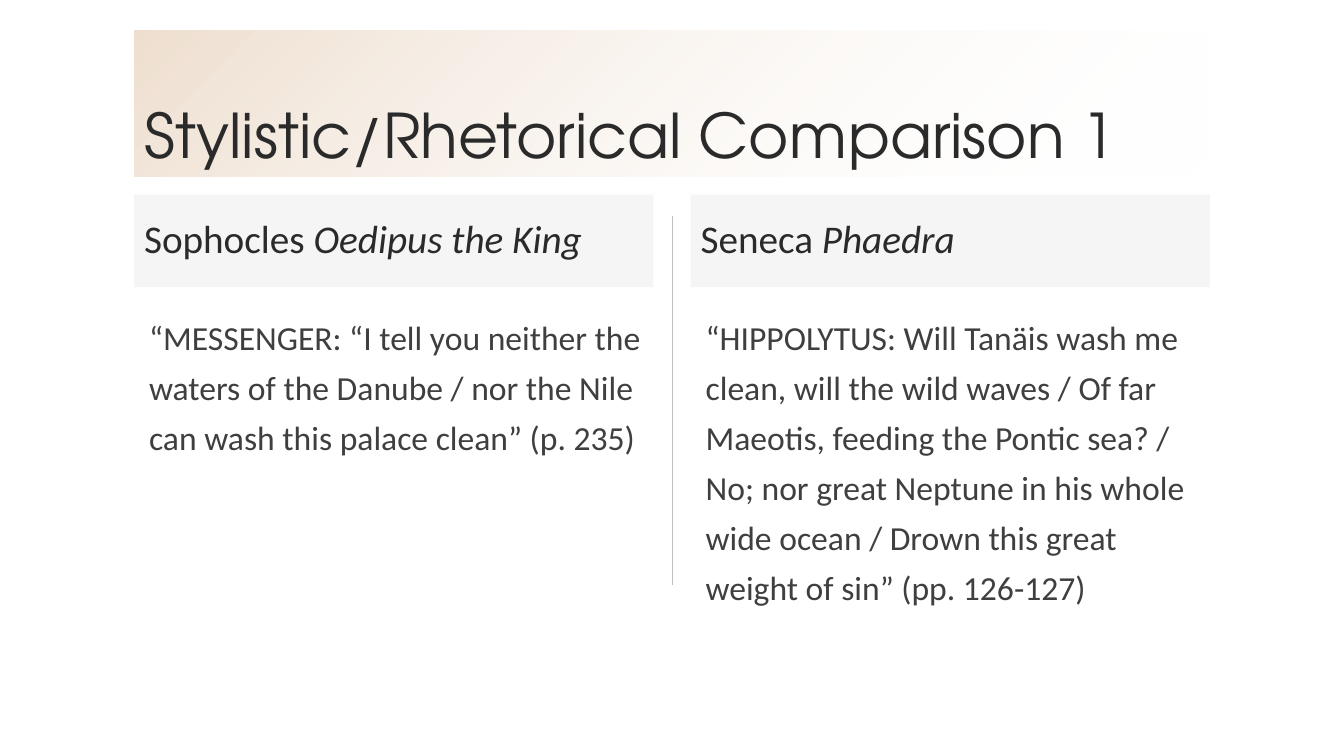
from lxml.etree import SubElement
from pptx import Presentation
from pptx.dml.color import RGBColor
from pptx.enum.shapes import MSO_CONNECTOR as Connector, MSO_SHAPE as Shape
from pptx.enum.text import MSO_ANCHOR as Anchor, MSO_AUTO_SIZE as AutoSize, PP_ALIGN as Align
from pptx.oxml.ns import qn
from pptx.util import Inches, Pt

DARK = RGBColor(0x2A, 0x2A, 0x2A)
BODY = RGBColor(0x3F, 0x3F, 0x3F)
GREY = RGBColor(0xBF, 0xBF, 0xBF)
TAN = RGBColor(0xCE, 0x9F, 0x71)
WHITE = RGBColor(0xFF, 0xFF, 0xFF)

LEFT, COLUMN_WIDTH, COLUMN_STEP = 1.33, 5.15, 5.52

COLUMNS = [
    ("Sophocles ", "Oedipus the King",
     "“MESSENGER: “I tell you neither the waters of the Danube / nor the Nile "
     "can wash this palace clean” (p. 235)"),
    ("Seneca ", "Phaedra",
     "“HIPPOLYTUS: Will Tanäis wash me clean, will the wild waves / Of far Maeotis, "
     "feeding the Pontic sea? / No; nor great Neptune in his whole wide ocean / "
     "Drown this great weight of sin” (pp. 126-127)"),
]


def set_alphas(shape, *percents):
    """Give each colour of the shape's fill its opacity, in order."""
    colours = shape.fill._xPr.iter(qn("a:srgbClr"))
    for colour, percent in zip(colours, percents):
        SubElement(colour, qn("a:alpha"), val=str(percent * 1000))


class ComparisonSlide:
    title_font = "TeX Gyre Adventor"
    text_font = "Calibri"

    def __init__(self, slide):
        self.slide = slide
        self.shapes = slide.shapes

    def style(self, frame, font_name, size, colour, anchor, spacing):
        frame.word_wrap = True
        frame.auto_size = AutoSize.NONE
        frame.vertical_anchor = anchor
        paragraph = frame.paragraphs[0]
        paragraph.alignment = Align.LEFT
        paragraph.line_spacing = spacing
        paragraph.space_before = Pt(0)
        paragraph.font.name = font_name
        paragraph.font.size = Pt(size)
        paragraph.font.color.rgb = colour
        return paragraph

    def title(self, text):
        title = self.shapes.title
        title.left, title.top = Inches(LEFT), Inches(0.3)
        title.width, title.height = Inches(10.67), Inches(1.45)
        title.text_frame.text = text
        self.style(title.text_frame, self.title_font, 44, DARK, Anchor.BOTTOM, 0.9)
        title.fill.gradient()
        title.fill.gradient_angle = 315
        for stop, colour, position in zip(title.fill.gradient_stops, (TAN, WHITE), (0, 1)):
            stop.color.rgb = colour
            stop.position = position
        set_alphas(title, 34, 0)

    def divider(self, x, top, bottom):
        divider = self.shapes.add_connector(
            Connector.STRAIGHT, Inches(x), Inches(top), Inches(x), Inches(bottom))
        divider.line.color.rgb = GREY
        divider.line.width = Pt(1)
        SubElement(divider._element.spPr, qn("a:effectLst"))

    def heading(self, left, author, work):
        heading = self.shapes.add_shape(
            Shape.RECTANGLE, Inches(left), Inches(1.93), Inches(COLUMN_WIDTH), Inches(0.92))
        heading.shadow.inherit = False
        heading.line.fill.background()
        heading.fill.solid()
        heading.fill.fore_color.rgb = GREY
        set_alphas(heading, 15)
        paragraph = self.style(
            heading.text_frame, self.text_font, 28, DARK, Anchor.MIDDLE, 0.9)
        paragraph.add_run().text = author
        work_run = paragraph.add_run()
        work_run.text = work
        work_run.font.italic = True

    def quotation(self, left, text):
        quotation = self.shapes.add_textbox(
            Inches(left), Inches(3), Inches(COLUMN_WIDTH), Inches(3.75))
        paragraph = self.style(
            quotation.text_frame, self.text_font, 24, BODY, Anchor.TOP, 1.24)
        paragraph.text = text
        paragraph._p.get_or_add_pPr().set("marL", str(Inches(0.05)))


def main():
    deck = Presentation()
    deck.slide_width, deck.slide_height = Inches(13.33), Inches(7.5)
    page = ComparisonSlide(deck.slides.add_slide(deck.slide_layouts[5]))
    page.divider(6.67, 2.14, 5.8)
    page.title("Stylistic/Rhetorical Comparison 1")
    for index, (author, work, quote) in enumerate(COLUMNS):
        left = LEFT + index * COLUMN_STEP
        page.heading(left, author, work)
        page.quotation(left, quote)
    deck.save("out.pptx")


if __name__ == "__main__":
    main()
